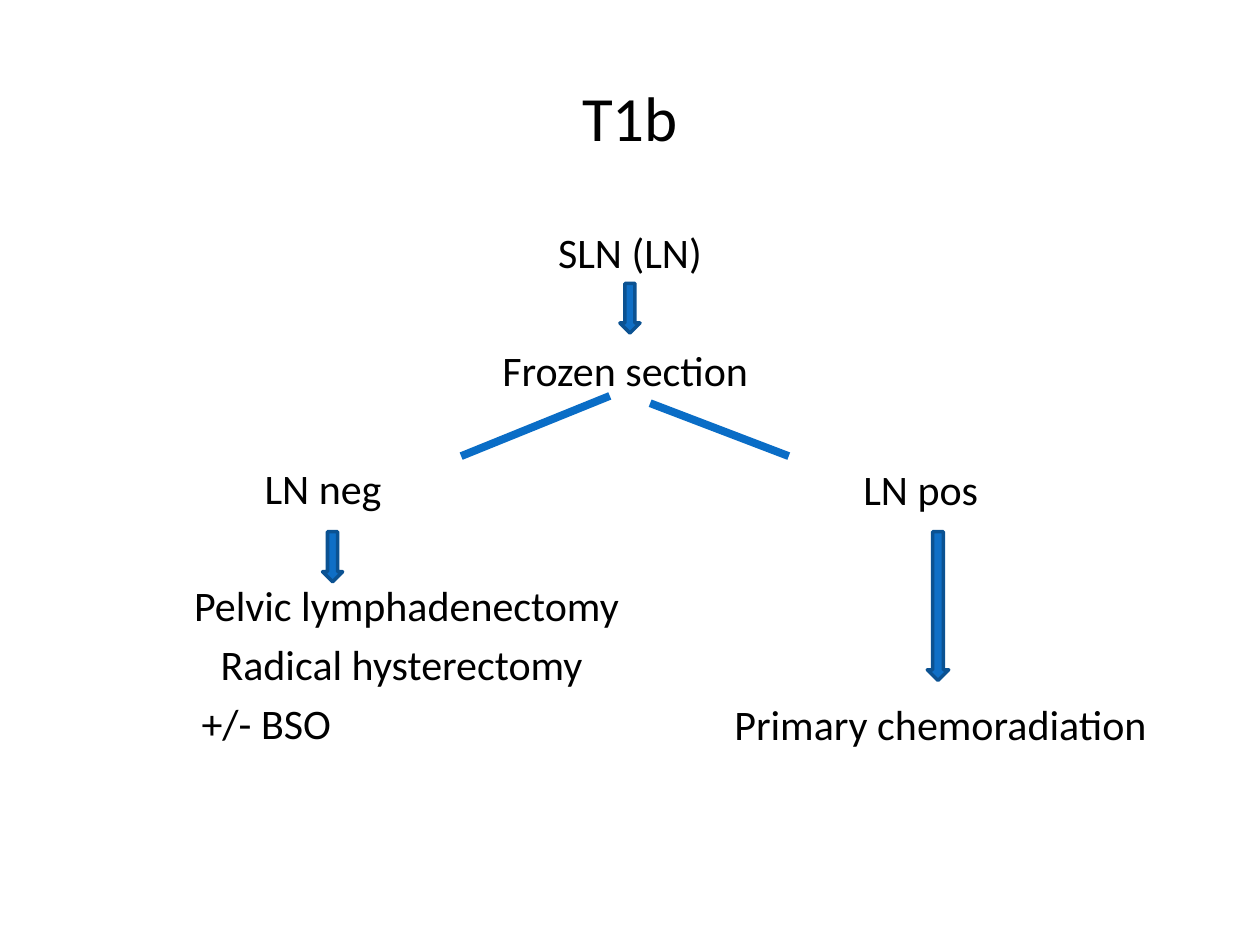
"""Treatment pathway for stage T1b, drawn as a branching flow."""
from typing import NamedTuple

from lxml.etree import SubElement
from pptx import Presentation
from pptx.dml.color import RGBColor
from pptx.enum.shapes import MSO_CONNECTOR, MSO_SHAPE
from pptx.enum.text import MSO_ANCHOR, MSO_AUTO_SIZE, PP_ALIGN
from pptx.oxml.ns import qn
from pptx.util import Emu, Inches, Pt

W, H = Inches(10), Inches(7.5)
FONT, BLACK = "Calibri", "000000"
GAP, SKIP = 4.8, 38.4


class Step(NamedTuple):
    """One line, its left indent in inches (0 centres it) and the space before."""
    text: str
    indent: float = 0
    before: float = SKIP


class Label(NamedTuple):
    """Text of the right-hand branch, placed in percent of the slide's size."""
    text: str
    left: float
    top: float
    width: float


class Arrow(NamedTuple):
    """Down arrow, in percent of the slide's size."""
    left: float
    top: float
    width: float
    height: float


class Branch(NamedTuple):
    """Straight line, in percent of the slide's size."""
    x1: float
    y1: float
    x2: float
    y2: float


STEPS = (
    Step("SLN (LN)", before=0),
    Step("Frozen section "),
    Step("LN neg", 1.5),
    Step("Pelvic lymphadenectomy", 0.94),
    Step("Radical hysterectomy", 1.15, GAP),
    Step("+/- BSO", 1.0, GAP),
)
LABELS = (
    Label("LN pos", 67.54, 48.4, 15),
    Label("Primary chemoradiation", 57.3, 73.27, 37.7),
)
ARROWS = (
    Arrow(49.2, 30, 1.6, 5.25),
    Arrow(25.6, 56.27, 1.6, 5.3),
    Arrow(73.6, 56.27, 1.7, 15.75),
)
BRANCHES = (Branch(48.4, 41.9, 36.6, 48.27), Branch(51.6, 42.67, 62.6, 48.27))


def rgb(value: str) -> RGBColor:
    """Turn a hex string into a colour."""
    return RGBColor.from_string(value)


def across(pct: float) -> Emu:
    """Percent of the slide's width."""
    return Emu(int(W * pct / 100))


def down(pct: float) -> Emu:
    """Percent of the slide's height."""
    return Emu(int(H * pct / 100))


def place(sp, left: float, top: float, width: float, height: float) -> None:
    """Move a placeholder to a box given in percent of the slide."""
    sp.left, sp.top = across(left), down(top)
    sp.width, sp.height = across(width), down(height)


def add_text(p, text: str, size: int) -> None:
    """Add one formatted run."""
    r = p.add_run()
    r.text = text
    r.font.name, r.font.size = FONT, Pt(size)
    r.font.color.rgb = rgb(BLACK)


def add_step(p, step: Step) -> None:
    """Write one line, centred or indented from the left."""
    pPr = p._p.get_or_add_pPr()
    pPr.set("marL", str(Inches(step.indent)))
    pPr.set("indent", "0")
    SubElement(pPr, qn("a:buNone"))
    p.alignment = PP_ALIGN.LEFT if step.indent else PP_ALIGN.CENTER
    p.space_before = Pt(step.before)
    add_text(p, step.text, 24)


def add_label(s, label: Label) -> None:
    """Write one line of the right-hand branch."""
    sp = s.shapes.add_textbox(across(label.left), down(label.top), across(label.width), down(6.8))
    sp.text_frame.word_wrap = True
    add_text(sp.text_frame.paragraphs[0], label.text, 24)


def add_arrow(s, arrow: Arrow) -> None:
    """Draw a filled down arrow."""
    sp = s.shapes.add_shape(MSO_SHAPE.DOWN_ARROW, across(arrow.left), down(arrow.top),
                            across(arrow.width), down(arrow.height))
    sp.shadow.inherit = False
    sp.fill.solid()
    sp.fill.fore_color.rgb = rgb("0F6FC6")
    sp.line.color.rgb = rgb("0B5292")
    sp.line.width = Pt(2)


def add_branch(s, branch: Branch) -> None:
    """Draw a thick straight line."""
    line = s.shapes.add_connector(MSO_CONNECTOR.STRAIGHT, across(branch.x1), down(branch.y1),
                                  across(branch.x2), down(branch.y2))
    line.line.color.rgb = rgb("0A6DC6")
    line.line.width = Pt(4.5)
    SubElement(line._element.spPr, qn("a:effectLst"))


def main() -> None:
    """Build and save the slide."""
    prs = Presentation()
    prs.slide_width, prs.slide_height = W, H
    s = prs.slides.add_slide(prs.slide_layouts[1])

    title, body = s.shapes.title, s.placeholders[1]
    place(title, 5, 4, 90, 16.67)
    title.text_frame.vertical_anchor = MSO_ANCHOR.MIDDLE
    p = title.text_frame.paragraphs[0]
    p.alignment = PP_ALIGN.CENTER
    add_text(p, "T1b", 36)

    place(body, 5, 23.33, 90, 66)
    tf = body.text_frame
    tf.auto_size = MSO_AUTO_SIZE.NONE
    for i, step in enumerate(STEPS):
        add_step(tf.add_paragraph() if i else tf.paragraphs[0], step)

    for label in LABELS:
        add_label(s, label)
    for arrow in ARROWS:
        add_arrow(s, arrow)
    for branch in BRANCHES:
        add_branch(s, branch)
    prs.save("out.pptx")


if __name__ == "__main__":
    main()
